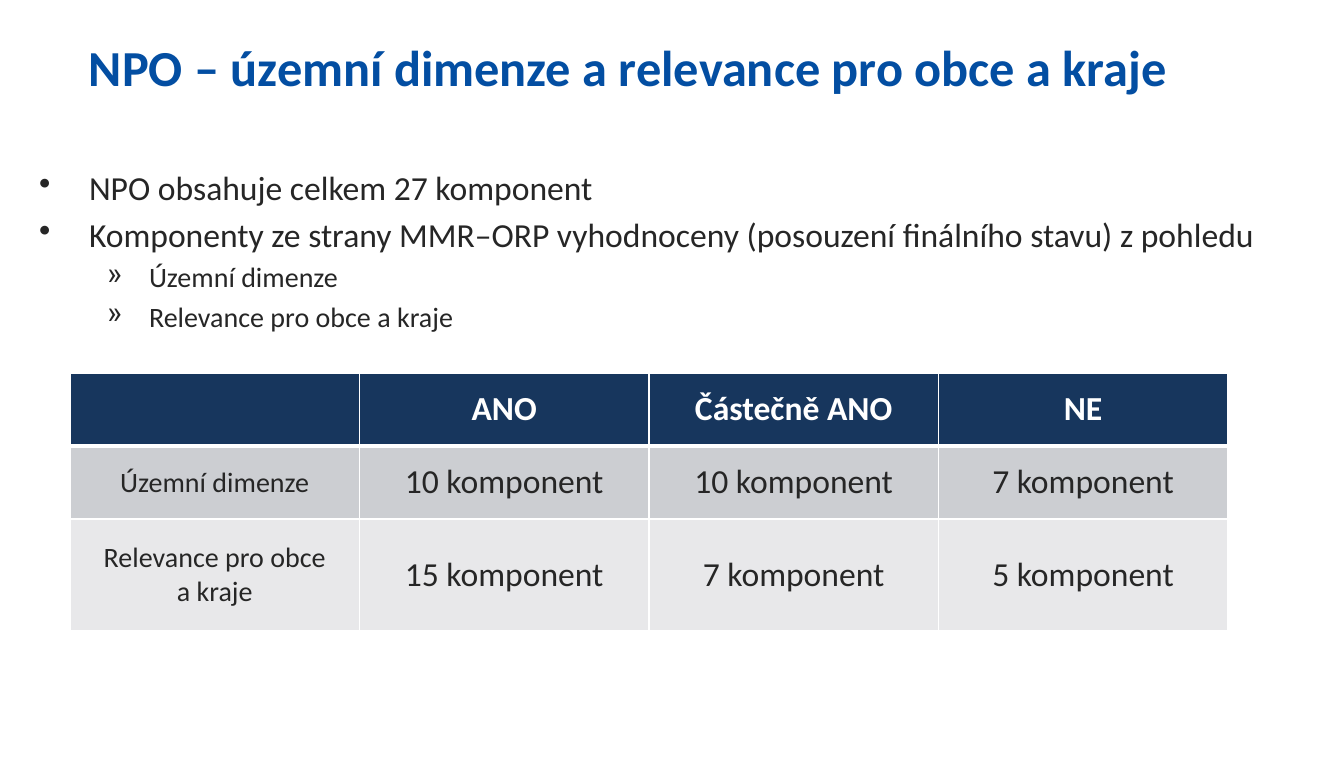
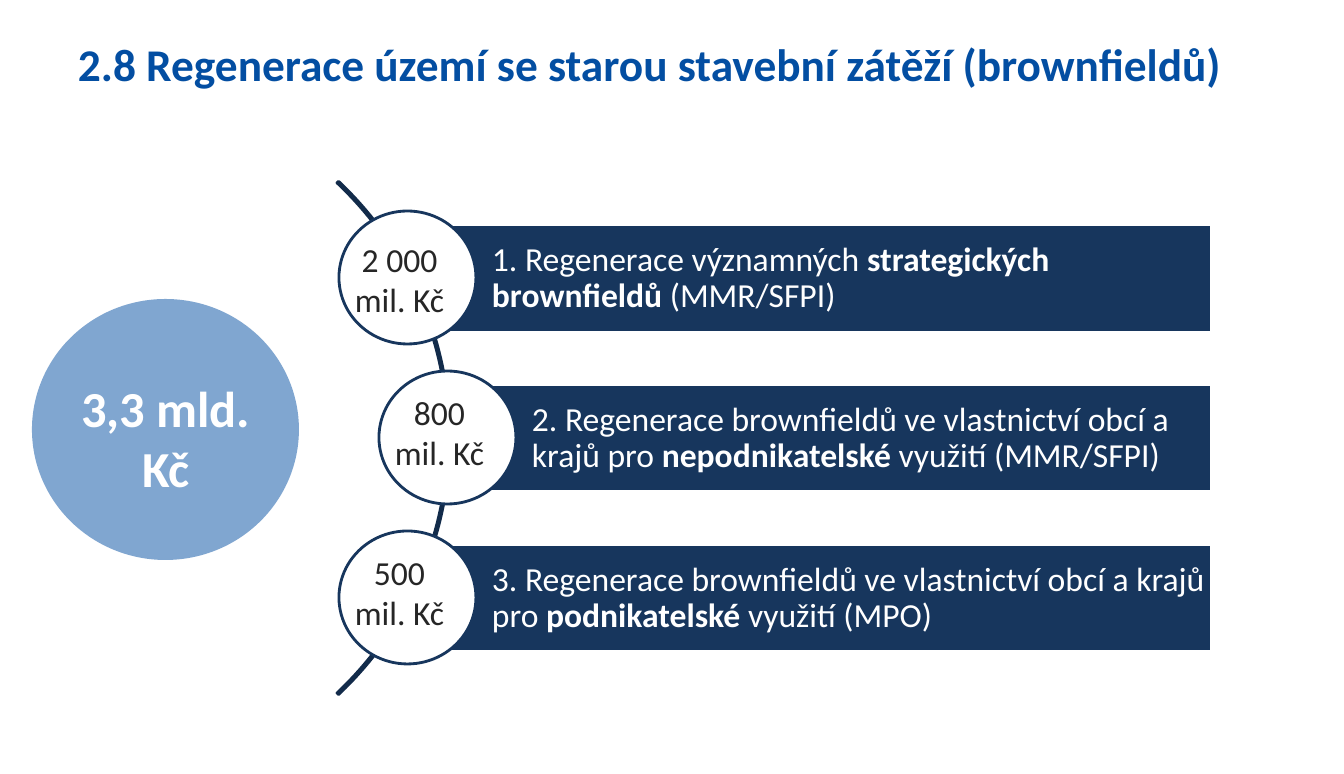
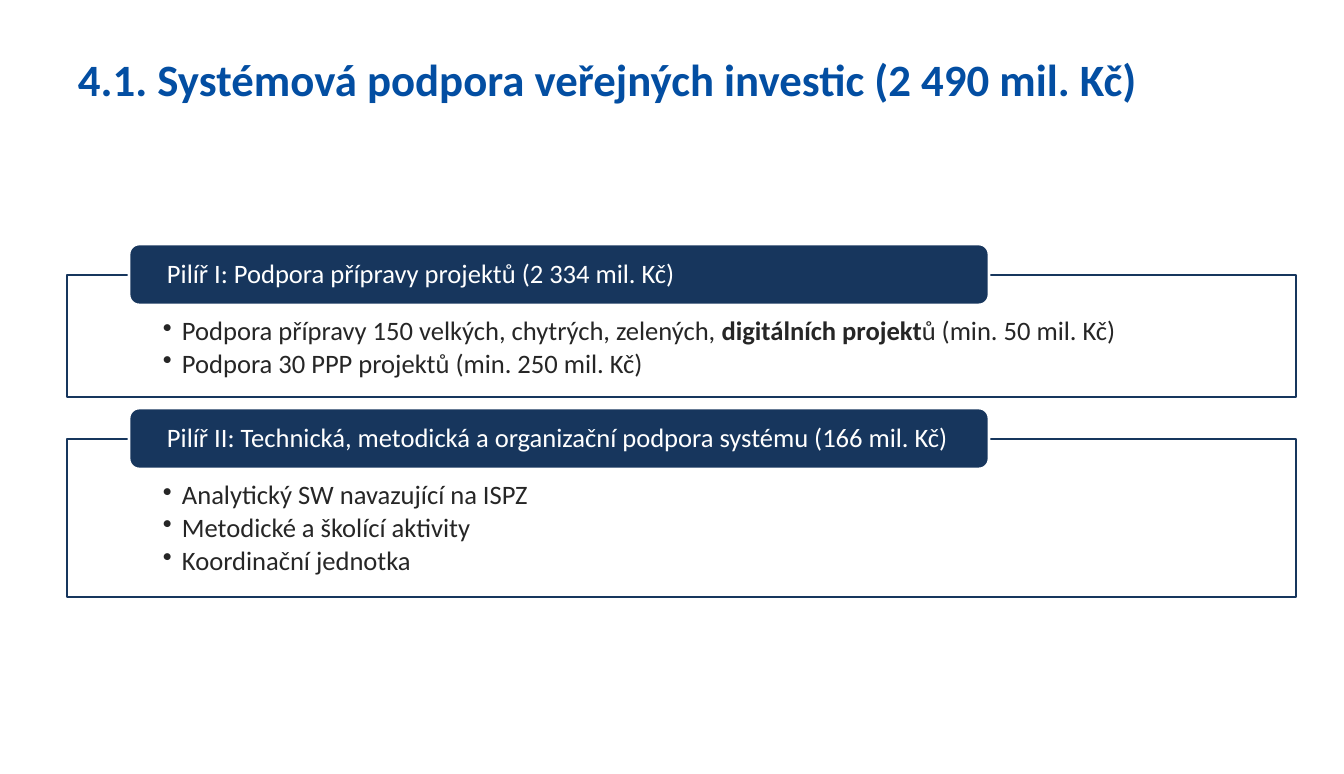
"""Build three slides on the NPO components and their public investment pillars."""
from dataclasses import dataclass
from typing import Any

from lxml.etree import SubElement
from pptx import Presentation
from pptx.dml.color import RGBColor as RGB
from pptx.enum.shapes import MSO_SHAPE as SHAPE
from pptx.enum.text import MSO_ANCHOR as ANCHOR, PP_ALIGN as ALIGN
from pptx.oxml.ns import qn
from pptx.util import Pt

PX = 914400 / 100.8
FONT = "Calibri"
COLORS = {
    "title": "034EA2",
    "navy": "17365D",
    "arc": "122B4A",
    "text": "262626",
    "white": "FFFFFF",
    "band": "CCCED2",
    "light": "E8E8EA",
}


@dataclass(frozen=True)
class Box:
    x: int
    y: int
    w: int
    h: int

    def emu(self) -> list[int]:
        return [px(v) for v in (self.x, self.y, self.w, self.h)]


@dataclass(frozen=True)
class Style:
    size: float
    color: str = "text"
    bold: bool = False
    align: Any = ALIGN.LEFT
    line: float = 1.0
    before: float = 0
    after: float = 0
    bullet: str = ""
    indent: int = 0
    hang: int = 0


@dataclass(frozen=True)
class Step:
    x: int
    amount: str
    label_dy: int
    text: str


@dataclass(frozen=True)
class Pillar:
    y: int
    h: int
    heading: str
    items: tuple[str, ...]


@dataclass(frozen=True)
class Row:
    h: int
    fill: str
    cells: tuple[str, ...]
    label: Style
    value: Style


INSETS = (10, 5, 10, 5)
TOPIC = Style(24, before=4.8, bullet="•", indent=50, hang=50)
SUBTOPIC = Style(20, before=4, bullet="»", indent=110, hang=42)
HEAD = Style(24, "white", True, ALIGN.CENTER)
LABEL = Style(20, align=ALIGN.CENTER)
VALUE = Style(24, align=ALIGN.CENTER)
TOTAL = Style(36, "white", True, ALIGN.CENTER)
STEP = Style(24, "white", line=0.9)
HEADING = Style(19, "white", line=0.9)
ITEM = Style(19, line=0.9, after=2.85, bullet="•", indent=19, hang=19)

ROWS = (
    Row(73, "navy", ("", "ANO", "Částečně ANO", "NE"), HEAD, HEAD),
    Row(73, "band", ("Územní dimenze", "10 komponent", "10 komponent", "7 komponent"),
        LABEL, VALUE),
    Row(112, "light", ("Relevance pro obce a kraje", "15 komponent", "7 komponent",
                       "5 komponent"), LABEL, VALUE),
)
STEPS = (
    Step(339, "2 000", 23,
         "1. Regenerace významných *strategických brownfieldů *(MMR/SFPI)"),
    Step(379, "800", 16, "2. Regenerace brownfieldů ve vlastnictví obcí a krajů pro "
         "*nepodnikatelské* využití (MMR/SFPI)"),
    Step(339, "500", 16, "3. Regenerace brownfieldů ve vlastnictví obcí a krajů pro "
         "*podnikatelské* využití (MPO)"),
)
PILLARS = (
    Pillar(275, 122, "Pilíř I: Podpora přípravy projektů (2 334 mil. Kč)",
           ("Podpora přípravy 150 velkých, chytrých, zelených, "
            "*digitálních projekt*ů (min. 50 mil. Kč)",
            "Podpora 30 PPP projektů (min. 250 mil. Kč)")),
    Pillar(439, 158,
           "Pilíř II: Technická, metodická a organizační podpora systému (166 mil. Kč)",
           ("Analytický SW navazující na ISPZ", "Metodické a školící aktivity",
            "Koordinační jednotka")),
)


def px(v: float) -> int:
    """Turn px into EMU."""
    return round(v * PX)


def rgb(name: str) -> RGB:
    """Look up a named colour."""
    return RGB.from_string(COLORS[name])


def assign(obj: Any, values: dict[str, Any]) -> None:
    """Set each named attribute of an object."""
    for name, value in values.items():
        setattr(obj, name, value)


def write(tf: Any, lines: list[tuple[str, Style]], anchor: Any = ANCHOR.TOP,
          insets: tuple[int, int, int, int] = INSETS) -> None:
    """Fill a text frame; asterisks switch bold on and off."""
    left, top, right, bottom = map(px, insets)
    assign(tf, {"word_wrap": True, "vertical_anchor": anchor, "margin_left": left,
                "margin_top": top, "margin_right": right, "margin_bottom": bottom})
    for i, (text, style) in enumerate(lines):
        p = tf.paragraphs[0] if i == 0 else tf.add_paragraph()
        if style.bullet:
            pPr = p._p.get_or_add_pPr()
            pPr.set("marL", str(px(style.indent)))
            pPr.set("indent", str(-px(style.hang)))
            SubElement(pPr, qn("a:buChar"), char=style.bullet)
        assign(p, {"alignment": style.align, "line_spacing": style.line,
                   "space_before": Pt(style.before if i else 0),
                   "space_after": Pt(style.after)})
        for j, part in enumerate(text.split("*")):
            if part:
                r = p.add_run()
                r.text = part
                assign(r.font, {"name": FONT, "size": Pt(style.size),
                                "bold": style.bold or j % 2 == 1})
                r.font.color.rgb = rgb(style.color)


def add_text(s: Any, box: Box, lines: list[tuple[str, Style]],
             insets: tuple[int, int, int, int] = INSETS) -> None:
    """Add a text box."""
    write(s.shapes.add_textbox(*box.emu()).text_frame, lines, insets=insets)


def add_shape(s: Any, kind: Any, box: Box, fill: str = "", line: str = "") -> Any:
    """Add a preset shape without shadow."""
    sp = s.shapes.add_shape(kind, *box.emu())
    sp.shadow.inherit = False
    if fill:
        sp.fill.solid()
        sp.fill.fore_color.rgb = rgb(fill)
    else:
        sp.fill.background()
    if line:
        sp.line.color.rgb = rgb(line)
        sp.line.width = Pt(2)
    else:
        sp.line.fill.background()
    return sp


def add_slide(prs: Any, title: str, size: float, x: int = 68, y: int = 31) -> Any:
    """Add a blank slide with the shared title style."""
    s = prs.slides.add_slide(prs.slide_layouts[6])
    add_text(s, Box(x, y, 1210, 102), [(title, Style(size, "title", True))])
    return s


def set_borders(cell: Any, bottom: float) -> None:
    """Draw white borders, before the fill is set."""
    tcPr = cell._tc.get_or_add_tcPr()
    for side, width in (("L", 1), ("R", 1), ("T", 1), ("B", bottom)):
        ln = SubElement(tcPr, qn(f"a:ln{side}"), w=str(Pt(width)))
        SubElement(SubElement(ln, qn("a:solidFill")), qn("a:srgbClr"), val=COLORS["white"])


def add_table(s: Any, box: Box) -> None:
    """Add the table of component counts."""
    table = s.shapes.add_table(len(ROWS), len(ROWS[0].cells), *box.emu()).table
    for i, row in enumerate(ROWS):
        table.rows[i].height = px(row.h)
        for j, text in enumerate(row.cells):
            cell = table.cell(i, j)
            set_borders(cell, 3 if i < 1 else 1)
            cell.fill.solid()
            cell.fill.fore_color.rgb = rgb(row.fill)
            write(cell.text_frame, [(text, row.value if j else row.label)])
            side = px(10 if j else 30)
            assign(cell, {"vertical_anchor": ANCHOR.MIDDLE,
                          "margin_left": side, "margin_right": side})


def add_step(s: Any, i: int, step: Step) -> None:
    """Add one bar with its circle and amount."""
    y = 211 + 160 * i
    left = step.x + 68
    bar = add_shape(s, SHAPE.RECTANGLE, Box(left, y + 14, 1211 - left, 107), "navy", "white")
    write(bar.text_frame, [(step.text, STEP)], ANCHOR.MIDDLE, (85, 7, 4, 7))
    add_shape(s, SHAPE.OVAL, Box(step.x, y, 137, 133), "white", "navy")
    add_text(s, Box(step.x, y + step.label_dy, 121, 92),
             [(step.amount, VALUE), ("mil. Kč", VALUE)], (0, 5, 0, 5))


def add_pillar(s: Any, pillar: Pillar) -> None:
    """Add one framed list with its heading tab."""
    frame = add_shape(s, SHAPE.RECTANGLE, Box(67, pillar.y, 1229, pillar.h), "white", "navy")
    write(frame.text_frame, [(item, ITEM) for item in pillar.items], insets=(96, 43, 96, 15))
    tab = add_shape(s, SHAPE.ROUNDED_RECTANGLE, Box(129, pillar.y - 31, 860, 61),
                    "navy", "white")
    write(tab.text_frame, [(pillar.heading, HEADING)], ANCHOR.MIDDLE, (35, 3, 35, 3))


def build_overview(prs: Any) -> None:
    """Build the slide on territorial dimension."""
    s = add_slide(prs, "NPO – územní dimenze a relevance pro obce a kraje", 36, x=79)
    add_text(s, Box(29, 162, 1276, 525), [
        ("NPO obsahuje celkem 27 komponent", TOPIC),
        ("Komponenty ze strany MMR–ORP vyhodnoceny (posouzení finálního stavu) z pohledu",
         TOPIC),
        ("Územní dimenze", SUBTOPIC),
        ("Relevance pro obce a kraje", SUBTOPIC),
    ])
    add_table(s, Box(70, 373, 1158, 258))


def build_brownfields(prs: Any) -> None:
    """Build the slide on brownfield regeneration."""
    s = add_slide(prs, "2.8 Regenerace území se starou stavební zátěží (brownfieldů)", 32.4)
    disc = add_shape(s, SHAPE.OVAL, Box(32, 299, 267, 261), "title")
    clr = disc._element.spPr.find(qn("a:solidFill")).find(qn("a:srgbClr"))
    SubElement(clr, qn("a:alpha"), val="50000")
    add_text(s, Box(55, 372, 222, 132), [("3,3 mld. Kč", TOTAL)])
    arc = add_shape(s, SHAPE.BLOCK_ARC, Box(-286, 80, 736, 716), line="arc")
    for i, value in enumerate((189, 27, 0.003)):
        arc.adjustments[i] = value
    for i, step in enumerate(STEPS):
        add_step(s, i, step)


def build_investments(prs: Any) -> None:
    """Build the slide on public investment support."""
    s = add_slide(prs, "4.1. Systémová podpora veřejných investic (2 490 mil. Kč)", 32, y=47)
    for pillar in PILLARS:
        add_pillar(s, pillar)


def main() -> None:
    """Build and save the presentation."""
    prs = Presentation()
    assign(prs, {"slide_width": px(1344), "slide_height": px(774)})
    for build in (build_overview, build_brownfields, build_investments):
        build(prs)
    prs.save("out.pptx")


if __name__ == "__main__":
    main()
